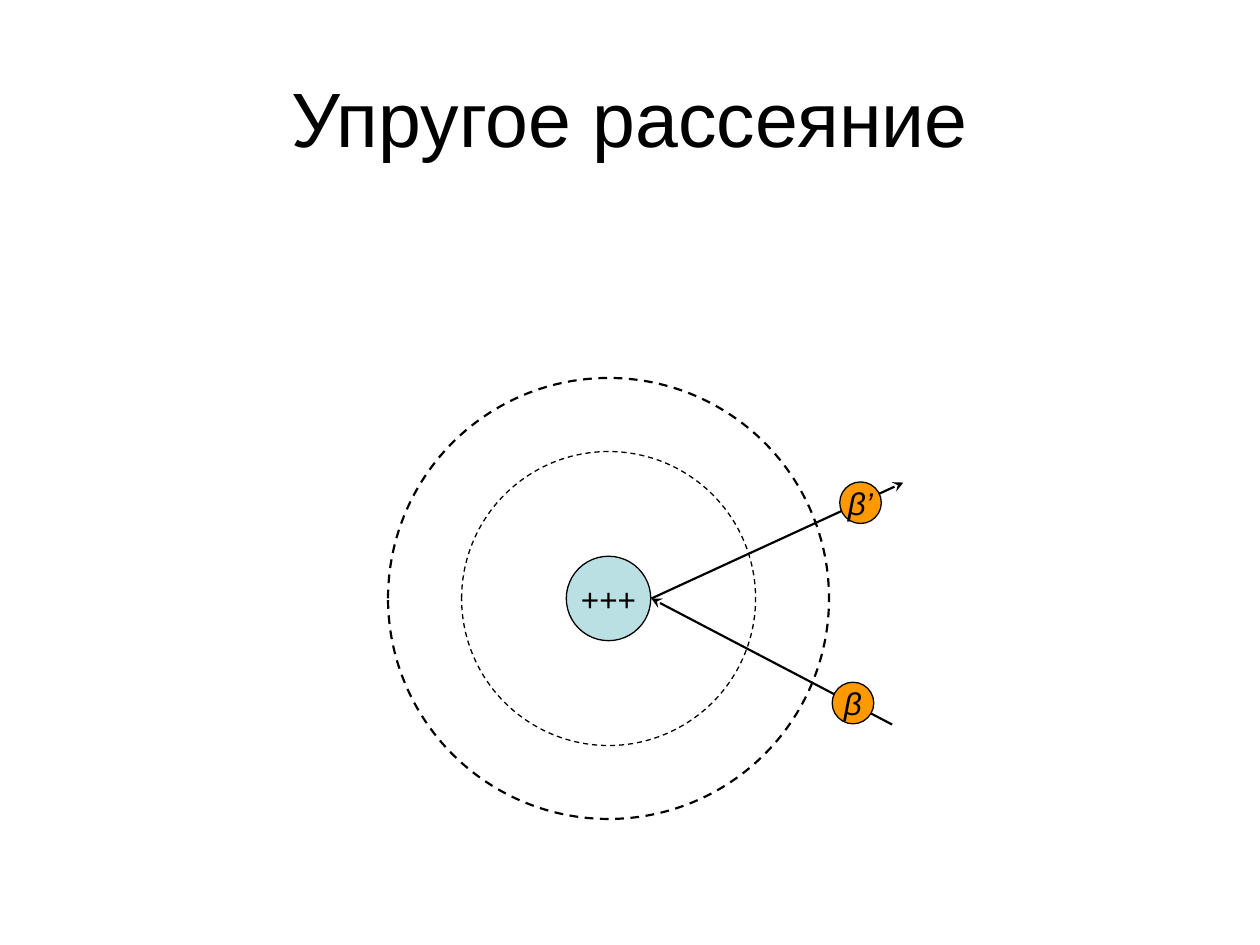
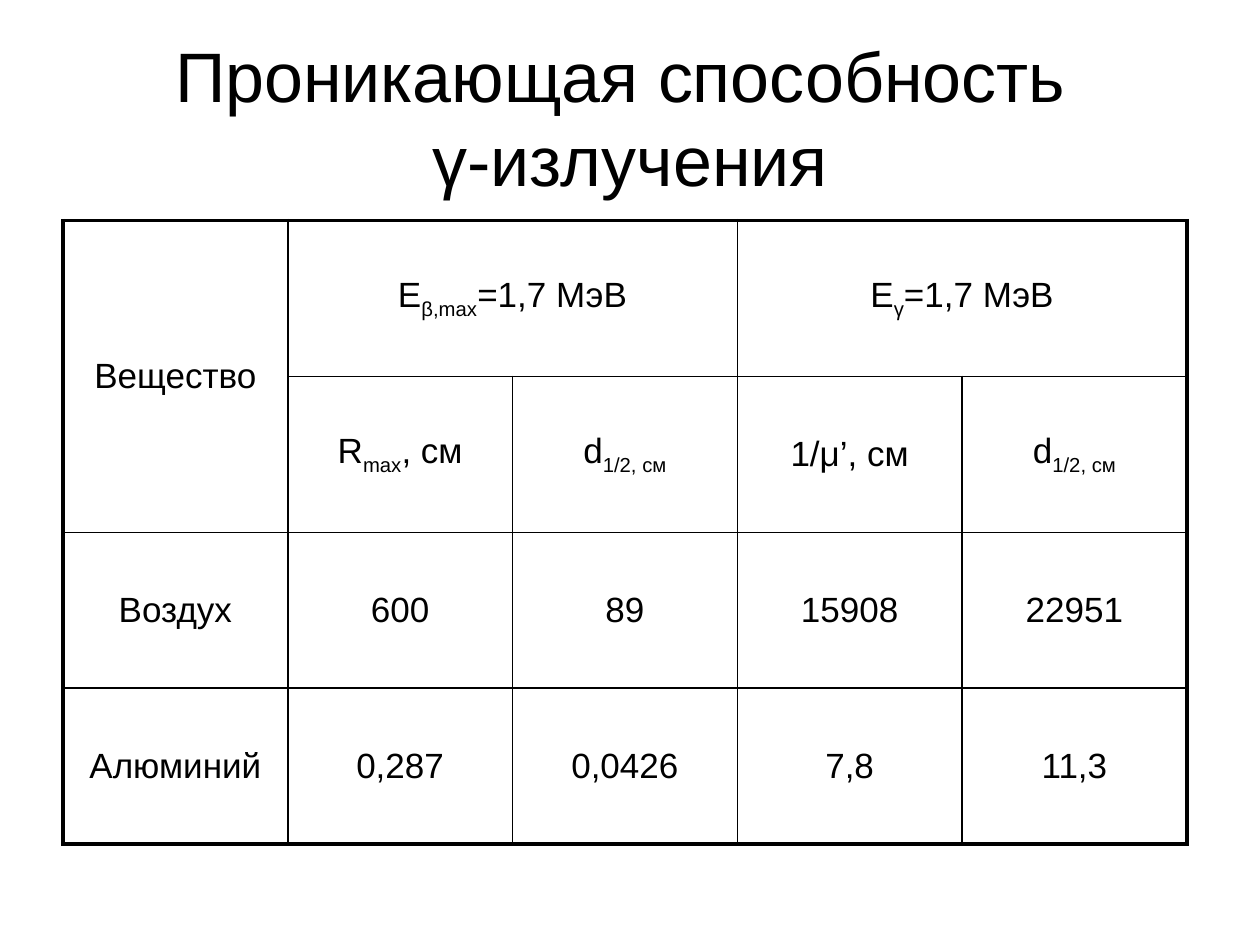
from dataclasses import dataclass
from itertools import product

from lxml.etree import SubElement
from pptx import Presentation
from pptx.dml.color import RGBColor
from pptx.enum.dml import MSO_LINE
from pptx.enum.shapes import MSO_CONNECTOR, MSO_SHAPE
from pptx.enum.text import MSO_ANCHOR, MSO_AUTO_SIZE, PP_ALIGN
from pptx.oxml.ns import qn
from pptx.util import Inches, Pt


@dataclass(frozen=True)
class Theme:
    font: str = "Arial"
    ink: str = "000000"
    core: str = "BBE0E3"
    beta: str = "FF9900"
    title: int = 44
    long_title: int = 40
    mark: int = 18
    cell: int = 20
    thin: float = 0.75
    grid: float = 1
    bold: float = 1.25
    frame: float = 2.25


THEME = Theme()


def color(code):
    return RGBColor.from_string(code)


def style(par, size, italic=False):
    par.alignment = PP_ALIGN.CENTER
    for run in par.runs:
        run.font.name = THEME.font
        run.font.size = Pt(size)
        run.font.italic = italic
        run.font.color.rgb = color(THEME.ink)


def add_slide(deck, text, size):
    slide = deck.slides.add_slide(deck.slide_layouts[5])
    title = slide.shapes.title
    title.left, title.top = Inches(0.5), Inches(0.3)
    title.width, title.height = Inches(9), Inches(1.25)
    frame = title.text_frame
    frame.text = text
    frame.auto_size = MSO_AUTO_SIZE.NONE
    frame.vertical_anchor = MSO_ANCHOR.MIDDLE
    style(frame.paragraphs[0], size)
    return slide


def add_disc(slide, x, y, size, fill=None, text="", italic=False, width=THEME.thin):
    disc = slide.shapes.add_shape(
        MSO_SHAPE.OVAL, Inches(x - size / 2), Inches(y - size / 2), Inches(size), Inches(size)
    )
    disc.shadow.inherit = False
    disc.line.color.rgb = color(THEME.ink)
    disc.line.width = Pt(width)
    if fill:
        disc.fill.solid()
        disc.fill.fore_color.rgb = color(fill)
    else:
        disc.fill.background()
        disc.line.dash_style = MSO_LINE.DASH
    if text:
        frame = disc.text_frame
        frame.text = text
        frame.word_wrap = False
        frame.vertical_anchor = MSO_ANCHOR.MIDDLE
        style(frame.paragraphs[0], THEME.mark, italic)


def add_arrow(slide, start, end):
    arrow = slide.shapes.add_connector(
        MSO_CONNECTOR.STRAIGHT, *(Inches(n) for n in (*start, *end))
    )
    arrow.line.color.rgb = color(THEME.ink)
    arrow.line.width = Pt(THEME.bold)
    props = arrow._element.spPr
    SubElement(props.find(qn("a:ln")), qn("a:tailEnd"), type="stealth")
    SubElement(props, qn("a:effectLst"))


def draw_atom(slide, left, top, size):
    x, y = left + size / 2, top + size / 2
    hit = (x + 0.34, y)
    add_disc(slide, x, y, 0.67, THEME.core, "+++")
    add_disc(slide, x, y, size * 2 / 3)
    add_disc(slide, x, y, size, width=THEME.bold)
    add_arrow(slide, (x + 2.25, y + 1), hit)
    add_arrow(slide, hit, (x + 2.34, y - 0.92))
    add_disc(slide, x + 2, y - 0.76, 0.33, THEME.beta, "β’", True)
    add_disc(slide, x + 1.94, y + 0.83, 0.33, THEME.beta, "β", True)


def fill_cell(cell, text):
    cell.vertical_anchor = MSO_ANCHOR.MIDDLE
    par = cell.text_frame.paragraphs[0]
    par.space_before = Pt(THEME.cell * 0.2)
    for index, part in enumerate(text.split("|")):
        run = par.add_run()
        run.text = part
        if index % 2:
            run._r.get_or_add_rPr().set("baseline", "-25000")
    style(par, THEME.cell)


def add_edges(cell, outer):
    props = cell._tc.get_or_add_tcPr()
    for side, edge in outer.items():
        width = THEME.frame if edge else THEME.grid
        line = SubElement(props, qn(f"a:ln{side}"), w=str(Pt(width)))
        paint = SubElement(line, qn("a:solidFill"))
        SubElement(paint, qn("a:srgbClr"), val=THEME.ink)
    cell.fill.background()


def draw_table(slide, left, top, width, height, data, spans):
    rows, cols = len(data), len(data[0])
    table = slide.shapes.add_table(
        rows, cols, Inches(left), Inches(top), Inches(width), Inches(height)
    ).table
    table.first_row = table.horz_banding = False
    for first, last in spans:
        table.cell(*first).merge(table.cell(*last))
    for row, col in product(range(rows), range(cols)):
        cell = table.cell(row, col)
        tall = cell.span_height if cell.is_merge_origin else 1
        wide = cell.span_width if cell.is_merge_origin else 1
        if not cell.is_spanned:
            fill_cell(cell, data[row][col])
        add_edges(cell, {
            "L": col == 0,
            "R": col + wide == cols,
            "T": row == 0,
            "B": row + tall == rows,
        })


def main():
    deck = Presentation()
    deck.slide_width, deck.slide_height = Inches(10), Inches(7.5)

    slide = add_slide(deck, "Упругое рассеяние", THEME.title)
    draw_atom(slide, 3.08, 3, 3.5)

    slide = add_slide(deck, "Проникающая способность \vγ-излучения", THEME.long_title)
    data = [
        ["Вещество", "E|β,max|=1,7 МэВ", "", "E|γ|=1,7 МэВ", ""],
        ["", "R|max|, см", "d|1/2, см", "1/μ’, см", "d|1/2, см"],
        ["Воздух", "600", "89", "15908", "22951"],
        ["Алюминий", "0,287", "0,0426", "7,8", "11,3"],
    ]
    spans = [((0, 0), (1, 0)), ((0, 1), (0, 2)), ((0, 3), (0, 4))]
    draw_table(slide, 0.5, 1.75, 8.92, 4.95, data, spans)

    deck.save("out.pptx")


if __name__ == "__main__":
    main()
